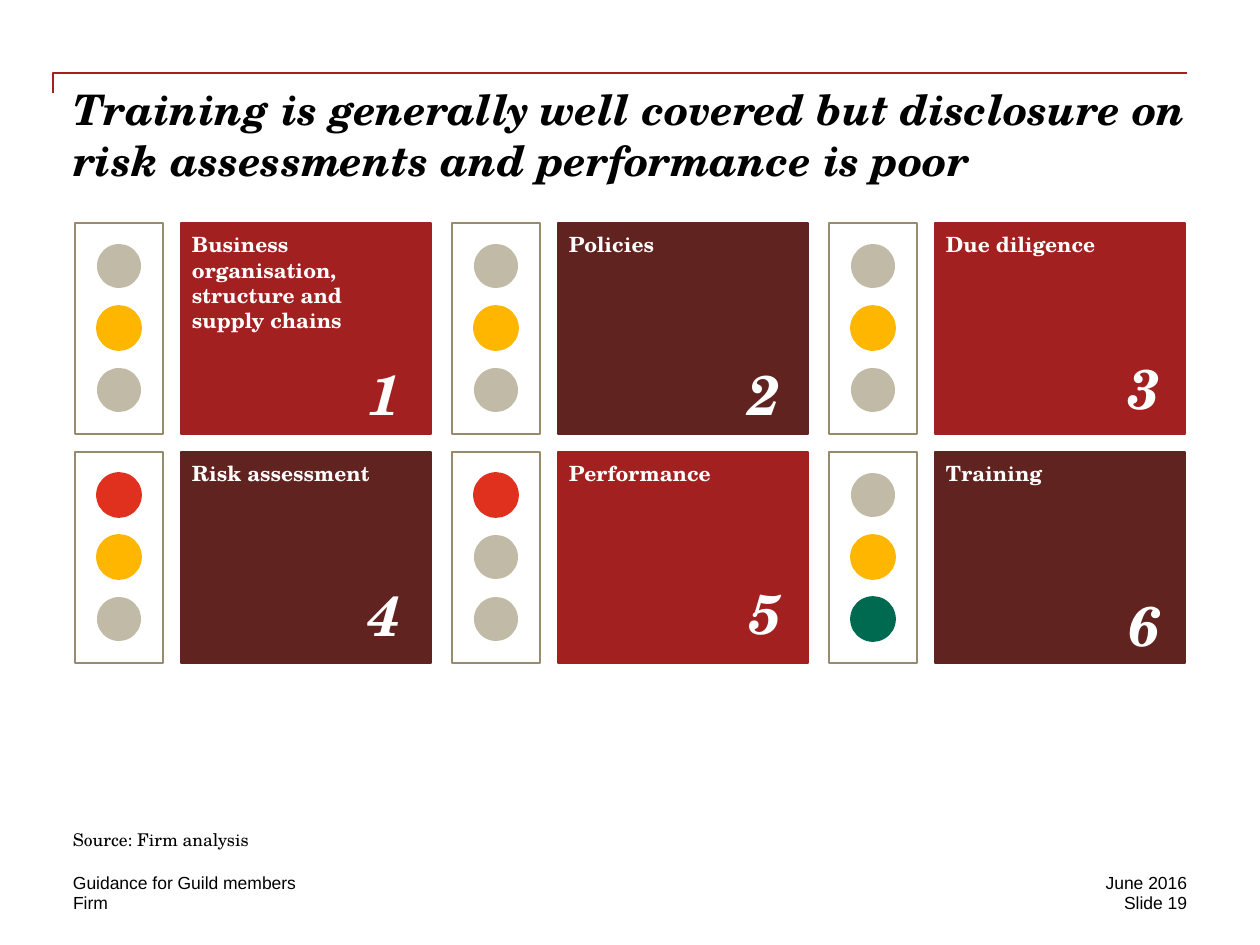
from pptx import Presentation
from pptx.util import Pt
from pptx.dml.color import RGBColor
from pptx.enum.shapes import MSO_SHAPE
from pptx.enum.text import MSO_ANCHOR, PP_ALIGN

RECT, OVAL = MSO_SHAPE.RECTANGLE, MSO_SHAPE.OVAL
TOP, BOTTOM = MSO_ANCHOR.TOP, MSO_ANCHOR.BOTTOM
LEFT, RIGHT = PP_ALIGN.LEFT, PP_ALIGN.RIGHT
BLACK = RGBColor(0x00, 0x00, 0x00)
WHITE = RGBColor(0xFF, 0xFF, 0xFF)
CRIMSON = RGBColor(0xA3, 0x20, 0x20)
MAROON = RGBColor(0x60, 0x23, 0x20)
OLIVE = RGBColor(0x96, 0x8C, 0x6D)
GREY = RGBColor(0xC0, 0xBA, 0xA7)
RED = RGBColor(0xE0, 0x30, 0x1E)
AMBER = RGBColor(0xFF, 0xB6, 0x00)
GREEN = RGBColor(0x00, 0x6A, 0x51)
PX = 914400 / 126
SERIF, SANS = "TeX Gyre Schola", "Arial"

prs = Presentation()
prs.slide_width, prs.slide_height = round(1260 * PX), round(945 * PX)
s = prs.slides.add_slide(prs.slide_layouts[6])


def add_shape(kind, box, fill, line=None):
    sp = s.shapes.add_shape(kind, *[round(v * PX) for v in box])
    sp.shadow.inherit = False
    sp.fill.solid()
    sp.fill.fore_color.rgb = fill
    if line is None:
        sp.line.fill.background()
    else:
        sp.line.color.rgb = line
        sp.line.width = Pt(1)
    return sp


def set_text(sp, text, font, color=BLACK, inset=(0, 0, 0, 0), anchor=TOP, align=LEFT, wrap=True):
    tf = sp.text_frame
    margins = [round(v * PX) for v in inset]
    frame = dict(zip(("margin_left", "margin_top", "margin_right", "margin_bottom"), margins),
                 word_wrap=wrap, vertical_anchor=anchor)
    for name, value in frame.items():
        setattr(tf, name, value)
    p = tf.paragraphs[0]
    p.text = text
    p.alignment = align
    for r in p.runs:
        for name, value in font.items():
            setattr(r.font, name, value)
        r.font.color.rgb = color


fb = s.shapes.build_freeform(53, 93, scale=PX)
fb.add_line_segments([(53, 73), (1187, 73)], close=False)
rule = fb.convert_to_shape()
rule.shadow.inherit = False
rule.fill.background()
rule.line.color.rgb = CRIMSON
rule.line.width = Pt(1)

TITLE = {"name": SERIF, "size": Pt(24), "bold": True, "italic": True}
CARD = {"name": SERIF, "size": Pt(12), "bold": True}
NUMBER = {"name": SERIF, "size": Pt(32), "bold": True, "italic": True}
SOURCE = {"name": SERIF, "size": Pt(10)}
FOOTER = {"name": SANS, "size": Pt(10)}

texts = [
    ((73, 84, 1113, 113), "Training is generally well covered but disclosure on risk assessments "
     "and performance is poor", TITLE, TOP, LEFT),
    ((73, 829, 179, 21), "Source: Firm analysis", SOURCE, BOTTOM, LEFT),
    ((73, 872, 368, 21), "Guidance for Guild members", FOOTER, BOTTOM, LEFT),
    ((73, 892, 357, 21), "Firm", FOOTER, TOP, LEFT),
    ((976, 872, 211, 21), "June 2016", FOOTER, TOP, RIGHT),
    ((976, 892, 211, 21), "Slide 19", FOOTER, TOP, RIGHT),
]
for box, text, font, anchor, align in texts:
    tb = s.shapes.add_textbox(*[round(v * PX) for v in box])
    set_text(tb, text, font, anchor=anchor, align=align)

cards = [
    ("Business organisation, structure and \vsupply chains", (GREY, AMBER, GREY), 360, 28),
    ("Policies", (GREY, AMBER, GREY), 359, 35),
    ("Due diligence", (GREY, AMBER, GREY), 354, 35),
    ("Risk assessment", (RED, AMBER, GREY), 580, 36),
    ("Performance", (RED, GREY, GREY), 578, 34),
    ("Training", (GREY, AMBER, GREEN), 590, 36),
]
for i, (label, lamps, number_y, number_w) in enumerate(cards):
    row, col = divmod(i, 3)
    x, y = 75 + 377 * col, 223 + 229 * row
    add_shape(RECT, (x, y, 88, 211), WHITE, OLIVE)
    for j, lamp in enumerate(lamps):
        add_shape(OVAL, (x + 22, y + 21 + 62 * j, 44, 44), lamp, None if lamp == GREY else lamp)
    fill = MAROON if i % 2 else CRIMSON
    card = add_shape(RECT, (x + 106, y, 250, 211), fill, fill)
    set_text(card, label, CARD, WHITE, inset=(11, 9, 9, 9))
    number = s.shapes.add_textbox(*[round(v * PX) for v in (369 + 380 * col, number_y, number_w, 68)])
    set_text(number, str(i + 1), NUMBER, WHITE, wrap=False)

prs.save("out.pptx")
